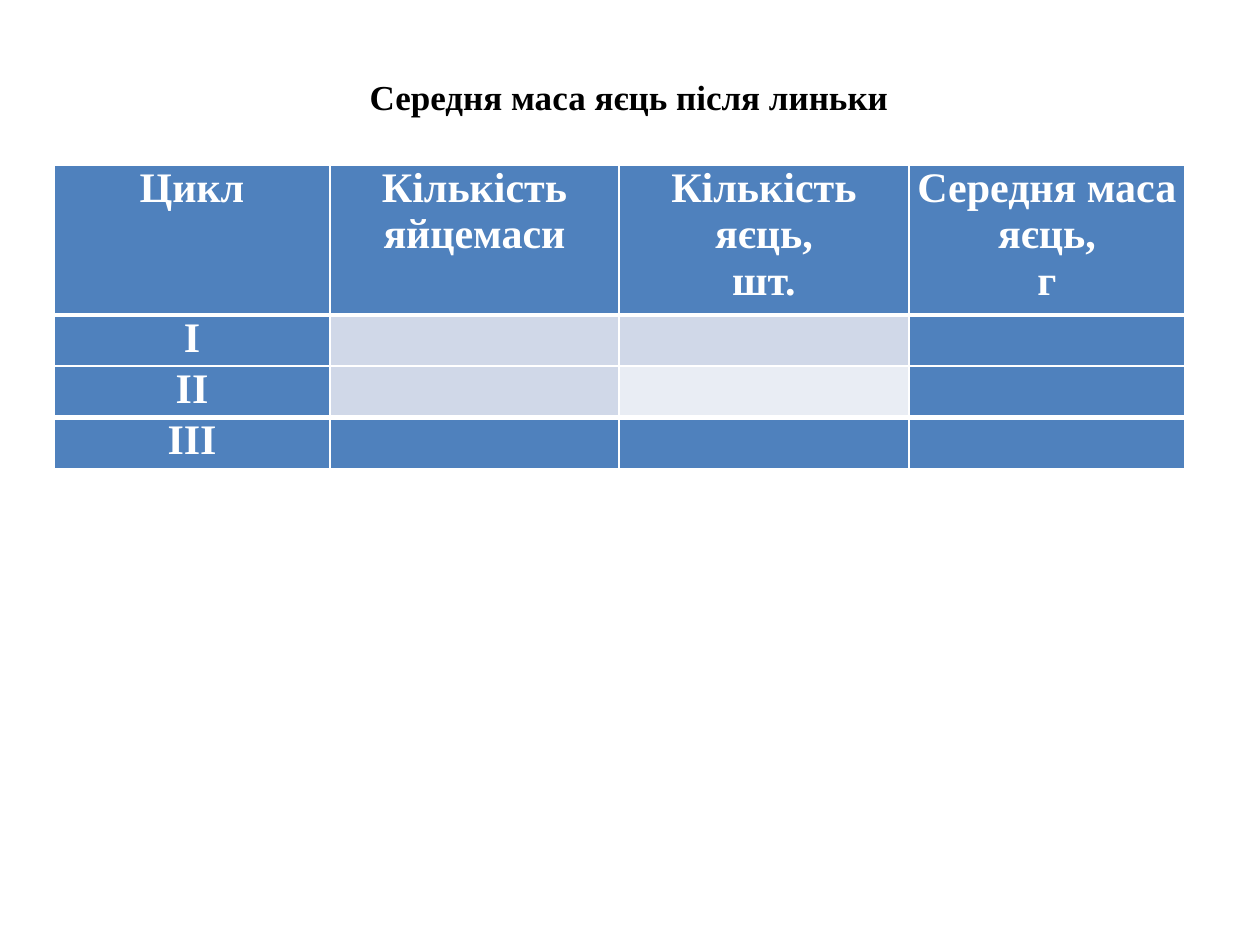
from lxml.etree import SubElement
from pptx import Presentation
from pptx.dml.color import RGBColor
from pptx.enum.text import MSO_ANCHOR as Anchor, MSO_AUTO_SIZE as AutoSize, PP_ALIGN as Align
from pptx.oxml.ns import qn
from pptx.util import Emu, Pt

EMU_PER_PX = 914400 / 126
COLORS = {
    "blue": "4F81BD",
    "band": "D0D8E8",
    "pale": "E9EDF4",
    "white": "FFFFFF",
    "black": "000000",
}
NO_MARGINS = dict.fromkeys(("margin_left", "margin_top", "margin_right", "margin_bottom"), 0)
COLUMN_WIDTHS = (276, 289, 290, 276)
ROW_HEIGHTS = (150, 50, 51, 51)
HEADERS = ("Цикл", "Кількість яйцемаси", "Кількість яєць,\nшт.", "Середня маса яєць,\nг")
CYCLES = ("І", "ІІ", "ІІІ")
ROWS = (HEADERS, *((cycle, "", "", "") for cycle in CYCLES))
FILLS = (
    ("blue",) * 4,
    ("blue", "band", "band", "blue"),
    ("blue", "band", "pale", "blue"),
    ("blue",) * 4,
)
THICK_EDGES = {(0, "B"), (1, "T"), (2, "B"), (3, "T")}


def px(length):
    return Emu(round(length * EMU_PER_PX))


def set_attributes(target, values):
    for name, value in values.items():
        setattr(target, name, value)


def write_text(frame, text, size, color):
    frame.text = text
    for paragraph in frame.paragraphs:
        paragraph.alignment = Align.CENTER
        set_attributes(paragraph.font, {"size": Pt(size)})
        for run in paragraph.runs:
            set_attributes(run.font, {"name": "Times New Roman", "size": Pt(size), "bold": True})
            run.font.color.rgb = RGBColor.from_string(COLORS[color])


def add_borders(cell, row_index):
    properties = cell._tc.get_or_add_tcPr()
    for side in "LRTB":
        width = Pt(3 if (row_index, side) in THICK_EDGES else 1)
        line = SubElement(properties, qn(f"a:ln{side}"), w=str(width))
        fill = SubElement(line, qn("a:solidFill"))
        SubElement(fill, qn("a:srgbClr"), val=COLORS["white"])


def style_cell(cell, text, fill, row_index):
    set_attributes(cell, NO_MARGINS)
    write_text(cell.text_frame, text, 24, "white")
    add_borders(cell, row_index)
    cell.fill.solid()
    cell.fill.fore_color.rgb = RGBColor.from_string(COLORS[fill])


def add_egg_table(slide, left, top):
    width, height = sum(COLUMN_WIDTHS), sum(ROW_HEIGHTS)
    frame = slide.shapes.add_table(
        len(ROWS), len(HEADERS), px(left), px(top), px(width), px(height)
    )
    table = frame.table
    for column, column_width in zip(table.columns, COLUMN_WIDTHS):
        column.width = px(column_width)
    for row, row_height in zip(table.rows, ROW_HEIGHTS):
        row.height = px(row_height)
    for row_index, (texts, fills) in enumerate(zip(ROWS, FILLS)):
        for column_index, (text, fill) in enumerate(zip(texts, fills)):
            style_cell(table.cell(row_index, column_index), text, fill, row_index)


def add_title(slide, text, left, top, width, height):
    shape = slide.shapes.add_textbox(px(left), px(top), px(width), px(height))
    set_attributes(shape.text_frame, {
        "word_wrap": False,
        "auto_size": AutoSize.SHAPE_TO_FIT_TEXT,
        "vertical_anchor": Anchor.MIDDLE,
    })
    write_text(shape.text_frame, text, 20, "black")


def main():
    presentation = Presentation()
    set_attributes(presentation, {"slide_width": px(1260), "slide_height": px(945)})
    slide = presentation.slides.add_slide(presentation.slide_layouts[6])
    add_egg_table(slide, 54, 165)
    add_title(slide, "Середня маса яєць після линьки", 355, 69, 548, 55)
    presentation.save("out.pptx")


if __name__ == "__main__":
    main()
